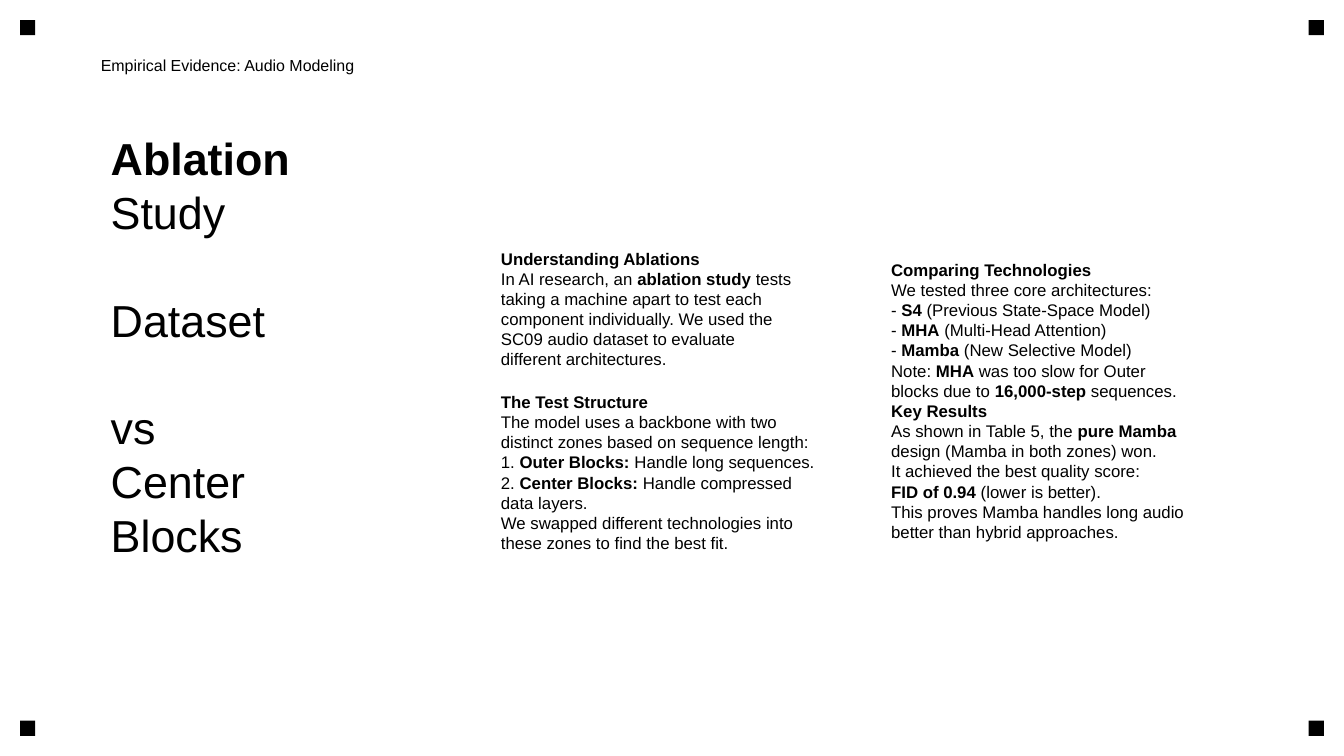
from dataclasses import dataclass
from itertools import product

from pptx import Presentation
from pptx.dml.color import RGBColor
from pptx.enum.shapes import MSO_SHAPE
from pptx.enum.text import MSO_ANCHOR
from pptx.slide import Slide
from pptx.util import Inches, Pt

BLACK = RGBColor(0, 0, 0)
FONT = "Arial"
LEAD = 1.2  # line pitch as a multiple of the font size
MARK = 0.15

HEAD = "Empirical Evidence: Audio Modeling"

TITLE = """**Ablation**
Study
Dataset
vs
Center
Blocks"""

STUDY = """**Understanding Ablations**
In AI research, an **ablation study** tests
taking a machine apart to test each
component individually. We used the
SC09 audio dataset to evaluate
different architectures.
**The Test Structure**
The model uses a backbone with two
distinct zones based on sequence length:
1. **Outer Blocks:** Handle long sequences.
2. **Center Blocks:** Handle compressed
data layers.
We swapped different technologies into
these zones to find the best fit."""

RESULTS = """**Comparing Technologies**
We tested three core architectures:
- **S4** (Previous State-Space Model)
- **MHA** (Multi-Head Attention)
- **Mamba** (New Selective Model)
Note: **MHA** was too slow for Outer
blocks due to **16,000-step** sequences.
**Key Results**
As shown in Table 5, the **pure Mamba**
design (Mamba in both zones) won.
It achieved the best quality score:
**FID of 0.94** (lower is better).
This proves Mamba handles long audio
better than hybrid approaches."""


@dataclass
class Block:
    """Text with **bold** marks; gap is the space in points after each line in ends."""
    text: str
    left: float
    size: float = 12
    top: float = 1.25
    width: float = 3.57
    height: float = 5.5
    inset: tuple[float, ...] = (0.1, 0.05, 0.05, 0.1)
    anchor: MSO_ANCHOR = MSO_ANCHOR.MIDDLE
    ends: tuple[str, ...] = ()
    gap: float = 0


BLOCKS = [
    Block(TITLE, 1, size=32, anchor=MSO_ANCHOR.TOP,
          ends=("Study", "Dataset"), gap=32 * LEAD),
    Block(STUDY, 4.87, ends=("different architectures.",), gap=16),
    Block(RESULTS, 8.74),
    Block(HEAD, 1, size=11.4, top=0.4, width=6, height=0.5, inset=(0, 0, 0, 0)),
]


def add_mark(slide: Slide, left: float, top: float) -> None:
    mark = slide.shapes.add_shape(
        MSO_SHAPE.RECTANGLE, Inches(left), Inches(top), Inches(MARK), Inches(MARK))
    mark.shadow.inherit = False
    mark.fill.solid()
    mark.fill.fore_color.rgb = BLACK
    mark.line.fill.background()


def add_block(slide: Slide, block: Block) -> None:
    box = slide.shapes.add_textbox(
        Inches(block.left), Inches(block.top), Inches(block.width), Inches(block.height))
    frame = box.text_frame
    frame.word_wrap = True
    frame.vertical_anchor = block.anchor
    (frame.margin_left, frame.margin_top,
     frame.margin_right, frame.margin_bottom) = map(Inches, block.inset)
    frame.text = block.text.replace("**", "")
    for para, line in zip(frame.paragraphs, block.text.split("\n")):
        para.line_spacing = Pt(block.size * LEAD)
        if line in block.ends:
            para.space_after = Pt(block.gap)
        para.text = ""
        for num, part in enumerate(line.split("**")):
            if part:
                run = para.add_run()
                run.text = part
                run.font.name = FONT
                run.font.size = Pt(block.size)
                run.font.bold = num % 2 == 1
                run.font.color.rgb = BLACK


def main() -> None:
    deck = Presentation()
    deck.slide_width, deck.slide_height = Inches(13.33), Inches(7.5)
    slide = deck.slides.add_slide(deck.slide_layouts[6])
    for top, left in product((0.2, 7.15), (0.2, 12.98)):
        add_mark(slide, left, top)
    for block in BLOCKS:
        add_block(slide, block)
    deck.save("out.pptx")


if __name__ == "__main__":
    main()
